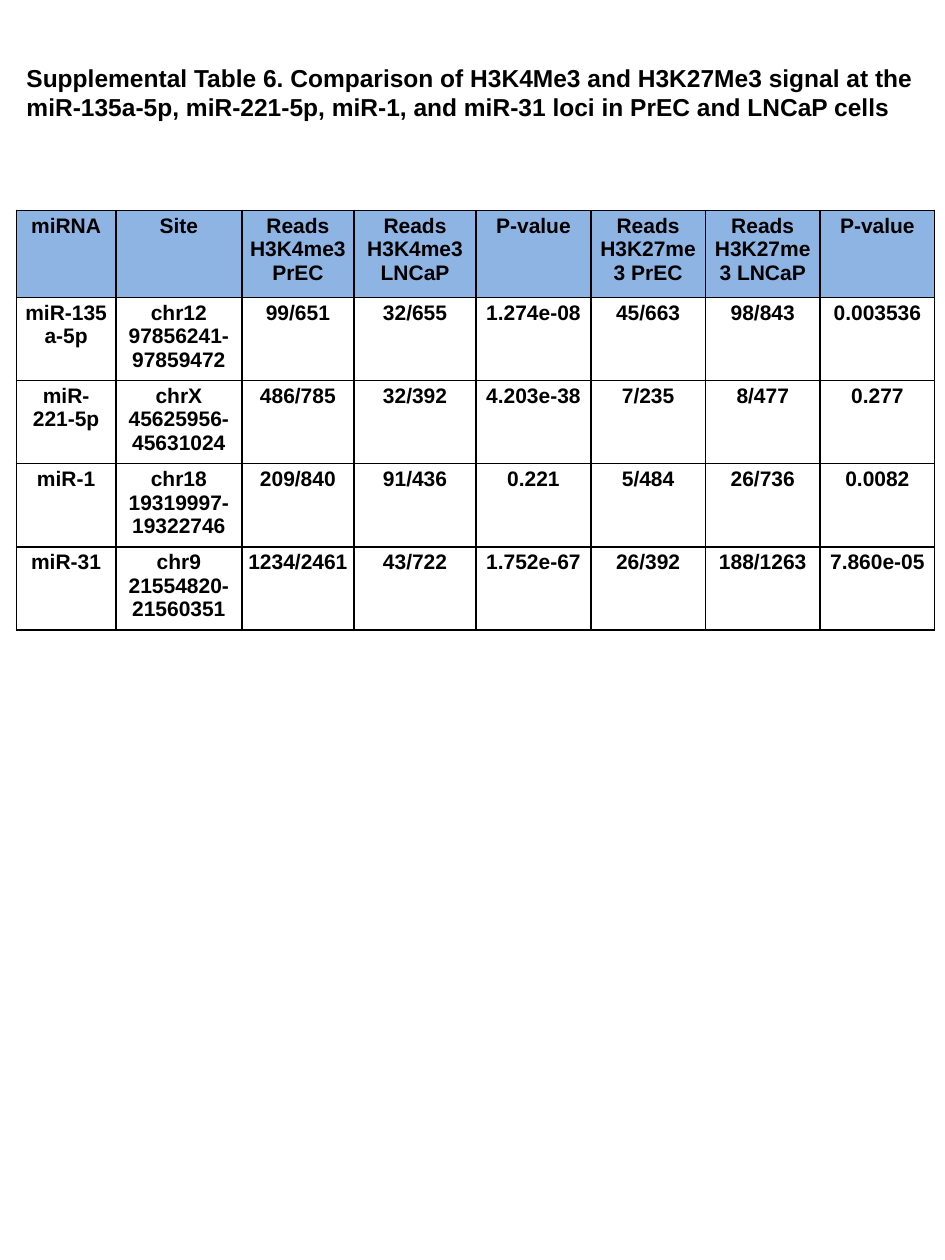
from lxml.etree import SubElement as Sub
from pptx import Presentation
from pptx.dml.color import RGBColor
from pptx.enum.text import MSO_ANCHOR as Anchor, MSO_AUTO_SIZE as Fit, PP_ALIGN as Align
from pptx.oxml.ns import qn
from pptx.util import Inches, Pt

BLACK = RGBColor(0x00, 0x00, 0x00)
WHITE = RGBColor(0xFF, 0xFF, 0xFF)
BLUE = RGBColor(0x8E, 0xB4, 0xE3)

TITLE = ("Supplemental Table 6. Comparison of H3K4Me3 and H3K27Me3 signal at the "
         "miR-135a-5p, miR-221-5p, miR-1, and miR-31 loci in PrEC and LNCaP cells")
WIDTHS = [0.79, 1, 0.89, 0.97] + [0.91] * 4
HEIGHTS = [0.69] + [0.61] * 4
ROWS = [
    ["miRNA", "Site", "Reads\nH3K4me3 PrEC", "Reads\nH3K4me3 LNCaP", "P-value",
     "Reads\nH3K27me3 PrEC", "Reads\nH3K27me3 LNCaP", "P-value"],
    ["miR-135a-5p", "chr12\n97856241-\n97859472", "99/651", "32/655", "1.274e-08",
     "45/663", "98/843", "0.003536"],
    ["miR-\n221-5p", "chrX\n45625956-\n45631024", "486/785", "32/392", "4.203e-38",
     "7/235", "8/477", "0.277"],
    ["miR-1", "chr18\n19319997-\n19322746", "209/840", "91/436", "0.221",
     "5/484", "26/736", "0.0082"],
    ["miR-31", "chr9\n21554820-\n21560351", "1234/2461", "43/722", "1.752e-67",
     "26/392", "188/1263", "7.860e-05"],
]


class Page:
    font = "Arial"
    pad_x, pad_y = Inches(0.05), Inches(0.03)

    def __init__(self, deck):
        self.wide, self.high = deck.slide_width, deck.slide_height
        self.slide = deck.slides.add_slide(deck.slide_layouts[5])

    def spot(self, x, y):
        """Turn shares of the slide's size into lengths."""
        return int(x * self.wide), int(y * self.high)

    def fill_text(self, box, frame, text, size, align):
        """Set text and style; box is what holds the margins."""
        box.margin_left = box.margin_right = self.pad_x
        box.margin_top = box.margin_bottom = self.pad_y
        box.vertical_anchor = Anchor.TOP
        frame.text = text
        for para in frame.paragraphs:
            para.alignment = align
            font = para.font
            font.name, font.size, font.bold = self.font, Pt(size), True
            font.color.rgb = BLACK

    def title(self, text, x, y, w, h):
        shape = self.slide.shapes.title
        shape.left, shape.top = self.spot(x, y)
        shape.width, shape.height = self.spot(w, h)
        frame = shape.text_frame
        frame.word_wrap, frame.auto_size = True, Fit.SHAPE_TO_FIT_TEXT
        self.fill_text(frame, frame, text, 14, Align.LEFT)

    def edge(self, cell):
        props = cell._tc.get_or_add_tcPr()
        for side in ("lnL", "lnR", "lnT", "lnB"):
            line = Sub(props, qn("a:" + side), w=str(Pt(1)))
            fill = Sub(line, qn("a:solidFill"))
            Sub(fill, qn("a:srgbClr"), val=str(BLACK))

    def table(self, rows, x, y):
        left, top = self.spot(x, y)
        grid = self.slide.shapes.add_table(
            len(rows), len(rows[0]), left, top,
            Inches(sum(WIDTHS)), Inches(sum(HEIGHTS))).table
        for col, width in zip(grid.columns, WIDTHS):
            col.width = Inches(width)
        for r, (row, high) in enumerate(zip(rows, HEIGHTS)):
            grid.rows[r].height = Inches(high)
            for c, text in enumerate(row):
                cell = grid.cell(r, c)
                self.edge(cell)
                cell.fill.solid()
                cell.fill.fore_color.rgb = WHITE if r else BLUE
                self.fill_text(cell, cell.text_frame, text, 12, Align.CENTER)


def main():
    deck = Presentation()
    deck.slide_width, deck.slide_height = Inches(7.5), Inches(10)
    page = Page(deck)
    # Heading above the table of reads
    page.title(TITLE, 0.16 / 7.5, 0.047, 7.25 / 7.5, 0.052)
    page.table(ROWS, 0.13 / 7.5, 0.167)
    deck.save("out.pptx")


if __name__ == "__main__":
    main()
